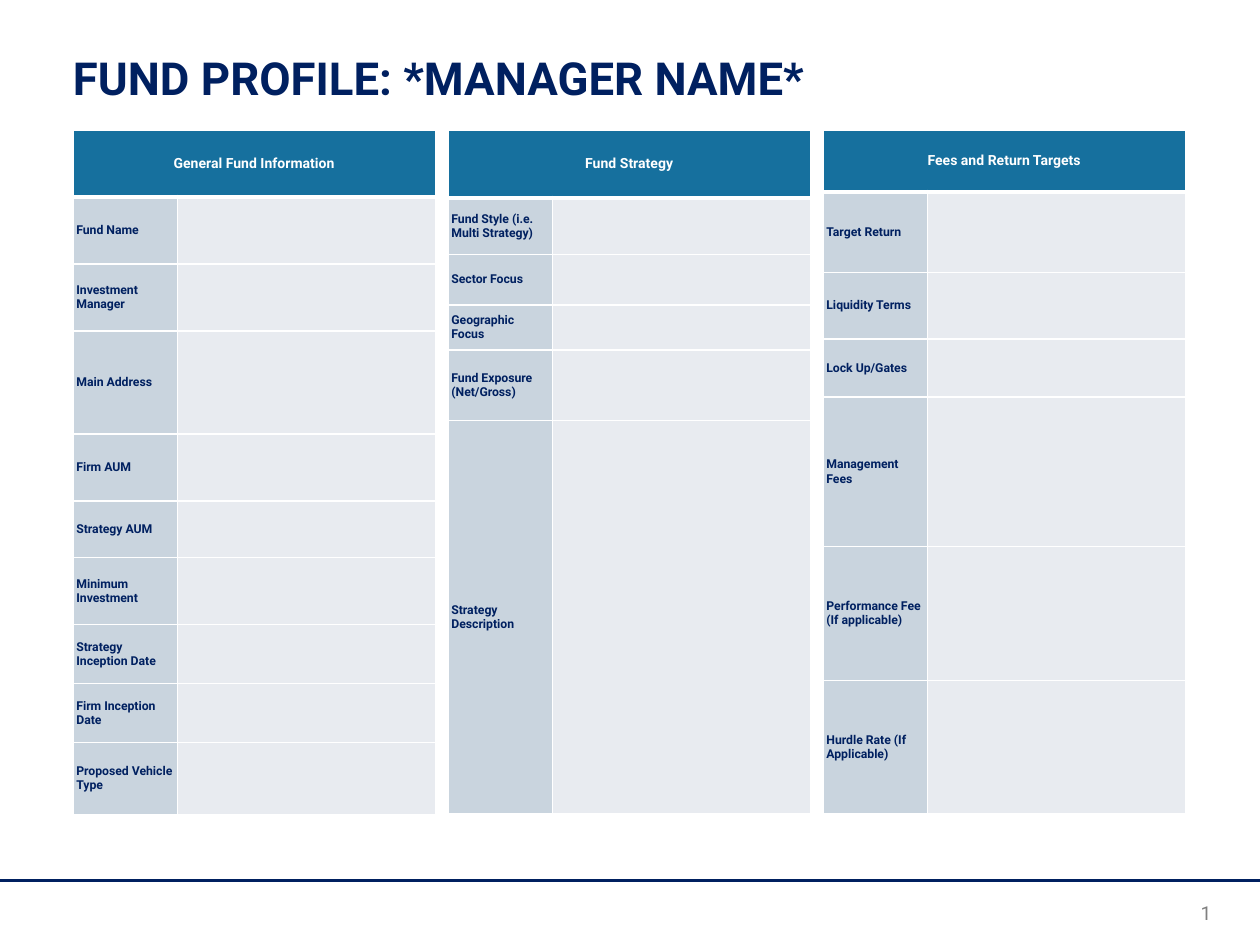
"""Build a fund profile slide with three form tables."""
from lxml.etree import SubElement as Sub
from pptx import Presentation
from pptx.dml.color import RGBColor as Rgb
from pptx.enum.text import MSO_ANCHOR as Anchor, PP_ALIGN as Align
from pptx.oxml.ns import qn
from pptx.util import Cm, Pt

HUES = {"navy": "002060", "teal": "16709E", "label": "C9D4DE",
        "blank": "E8EBF0", "gray": "808080", "white": "FFFFFF"}
LEFT, TOP, STEP = 1.47, 2.62, 7.56
COLS = (2.11, 5.2)
FORMS = [
    ("General Fund Information", 1.35, [
        ("Fund Name", 1.35), ("Investment Manager", 1.35),
        ("Main Address", 2.08), ("Firm AUM", 1.35), ("Strategy AUM", 1.14),
        ("Minimum Investment", 1.35), ("Strategy Inception Date", 1.19),
        ("Firm Inception Date", 1.19), ("Proposed Vehicle Type", 1.45)]),
    ("Fund Strategy", 1.37, [
        ("Fund Style (i.e. Multi Strategy)", 1.14), ("Sector Focus", 1.02),
        ("Geographic Focus", 0.91), ("Fund Exposure (Net/Gross)", 1.42),
        ("Strategy Description", 7.93)]),
    ("Fees and Return Targets", 1.25, [
        ("Target Return", 1.62), ("Liquidity Terms", 1.34),
        ("Lock Up/Gates", 1.17), ("Management Fees", 3.02),
        ("Performance Fee (If applicable)", 2.7),
        ("Hurdle Rate (If Applicable)", 2.69)]),
]


def write(frame, text, size=7, hue="navy", bold=True, align=Align.LEFT, lead=None):
    """Put one formatted paragraph into a text frame."""
    para = frame.paragraphs[0]
    para.alignment = align
    if lead:
        para.line_spacing = Pt(lead)
    run = para.add_run()
    run.text = text
    font = run.font
    font.name, font.size, font.bold = "Roboto", Pt(size), bold
    font.color.rgb = Rgb.from_string(HUES[hue])


class Page:
    """Hold the style and the current slide."""

    def __init__(self, deck):
        """Add a slide with a title placeholder."""
        self.slide = deck.slides.add_slide(deck.slide_layouts[5])
        self.shapes = self.slide.shapes

    def title(self, text):
        """Place and fill the title."""
        head = self.shapes.title
        head.left, head.top, head.width, head.height = (
            Cm(LEFT), Cm(0.03), Cm(22.43), Cm(2.08))
        frame = head.text_frame
        frame.margin_left = frame.margin_right = frame.margin_bottom = 0
        frame.margin_top = Cm(0.13)
        frame.vertical_anchor = Anchor.BOTTOM
        write(frame, text, size=26, lead=27)

    def rule(self, top):
        """Draw a line across the slide."""
        line = self.shapes.add_connector(1, 0, Cm(top), Cm(25.4), Cm(top))
        line.line.color.rgb = Rgb.from_string(HUES["navy"])
        line.line.width = Pt(1.5)
        Sub(line._element.spPr, qn("a:effectLst"))

    def number(self, text):
        """Write the page number."""
        box = self.shapes.add_textbox(Cm(22.38), Cm(18.19), Cm(2.29), Cm(0.58))
        box.text_frame.word_wrap = True
        box.text_frame.vertical_anchor = Anchor.BOTTOM
        write(box.text_frame, text, size=11, hue="gray", bold=False, align=Align.RIGHT)

    def cell(self, cell, hue, over=1, under=1):
        """Set the borders, margins and fill of a cell."""
        props = cell._tc.get_or_add_tcPr()
        for side, wide in zip("LRTB", (1, 1, over, under)):
            edge = Sub(props, qn(f"a:ln{side}"), w=str(Pt(wide)))
            Sub(Sub(edge, qn("a:solidFill")), qn("a:srgbClr"), val=HUES["white"])
        cell.margin_left = cell.margin_right = Cm(0.07)
        cell.margin_top = cell.margin_bottom = Cm(0.05)
        cell.vertical_anchor = Anchor.MIDDLE
        cell.fill.solid()
        cell.fill.fore_color.rgb = Rgb.from_string(HUES[hue])

    def form(self, left, head, high, rows):
        """Add a table with a merged header and label cells."""
        highs = [high] + [tall for _, tall in rows]
        grid = self.shapes.add_table(len(highs), 2, Cm(left), Cm(TOP),
                                     Cm(sum(COLS)), Cm(sum(highs))).table
        for col, wide in zip(grid.columns, COLS):
            col.width = Cm(wide)
        for row, tall in zip(grid.rows, highs):
            row.height = Cm(tall)
        for cell in grid.rows[0].cells:
            self.cell(cell, "teal", under=3)
        grid.cell(0, 0).merge(grid.cell(0, 1))
        write(grid.cell(0, 0).text_frame, head, size=8, hue="white", align=Align.CENTER)
        for num, (text, _) in enumerate(rows, 1):
            for col, hue in enumerate(("label", "blank")):
                self.cell(grid.cell(num, col), hue, over=3 if num == 1 else 1)
            write(grid.cell(num, 0).text_frame, text)


def main():
    """Build and save the deck."""
    deck = Presentation()
    deck.slide_width, deck.slide_height = Cm(25.4), Cm(19.05)
    page = Page(deck)
    page.rule(17.75)
    page.title("FUND PROFILE: *MANAGER NAME*")
    page.number("1")
    for num, form in enumerate(FORMS):
        page.form(LEFT + num * STEP, *form)
    deck.save("out.pptx")


if __name__ == "__main__":
    main()
